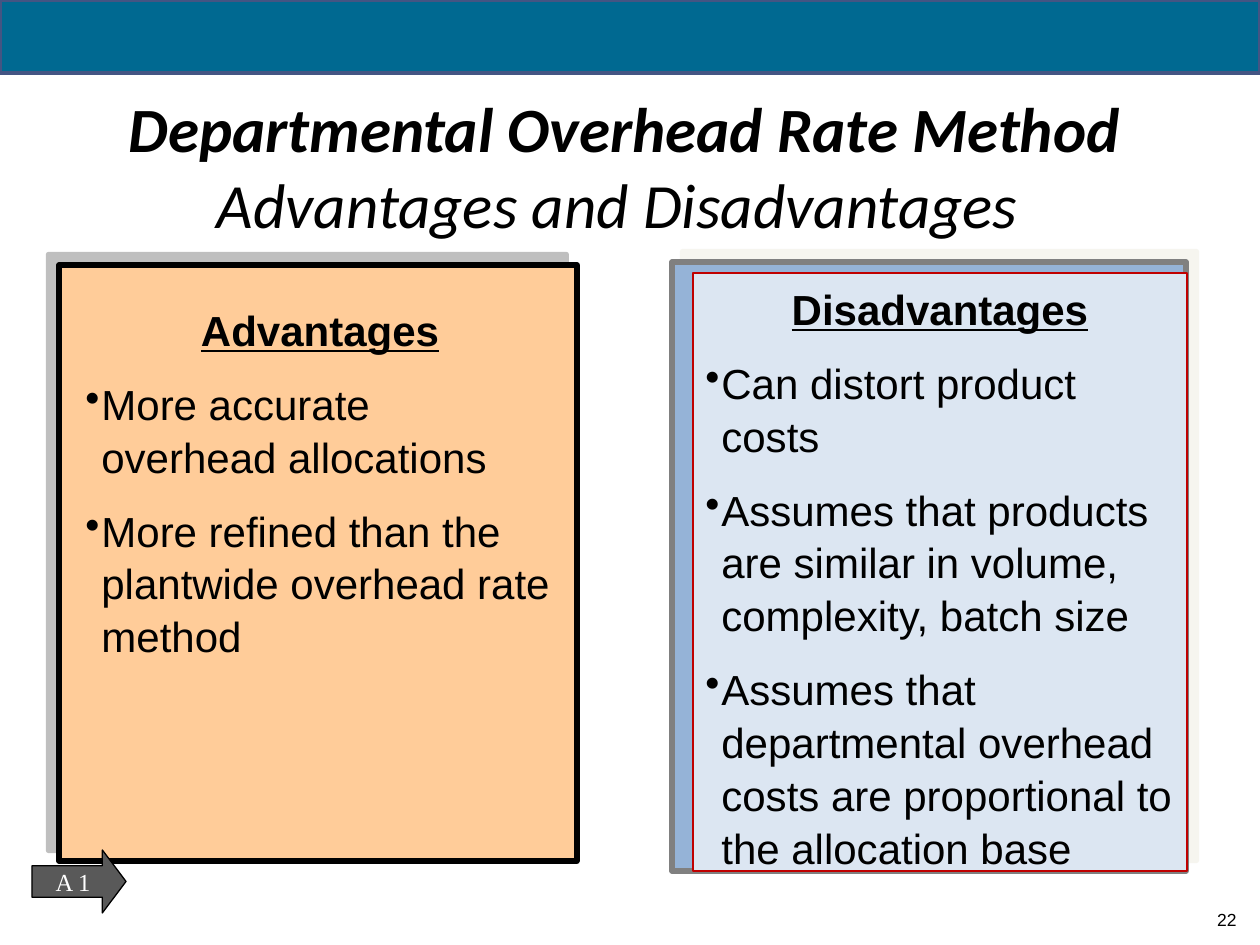
import lxml.etree
import pptx
import pptx.dml.color
import pptx.enum.shapes
import pptx.enum.text
import pptx.oxml.ns
import pptx.util

SHAPE = pptx.enum.shapes.MSO_SHAPE
ALIGN = pptx.enum.text.PP_ALIGN
ANCHOR = pptx.enum.text.MSO_ANCHOR
PX_PER_INCH = 126

TITLE = [
    ("Departmental Overhead Rate Method", True),
    ("Advantages and Disadvantages ", False),
]
PANELS = [
    {"box": (672, 262, 514, 609), "fill": "95B3D7", "line": "808080",
     "shadow": ("EEECE1", 315)},
    {"box": (59, 265, 518, 596), "fill": "FFCC99", "line": "000000",
     "shadow": ("808080", 225)},
]
LISTS = [
    {"box": (73, 294, 494, 365), "fill": None, "line": None,
     "heading": "Advantages",
     "points": [
         "More accurate overhead allocations",
         "More refined than the plantwide overhead rate method",
     ]},
    {"box": (693, 273, 494, 598), "fill": "DCE6F2", "line": "C00000",
     "heading": "Disadvantages",
     "points": [
         "Can distort product costs",
         "Assumes that products are similar in volume, complexity, batch size",
         "Assumes that departmental overhead costs are proportional "
         "to the allocation base",
     ]},
]


def px(n):
    return round(n * pptx.util.Inches(1) / PX_PER_INCH)


def rgb(value):
    return pptx.dml.color.RGBColor.from_string(value)


def set_font(font, name, size, color="000000"):
    font.name = name
    font.size = pptx.util.Pt(size)
    font.color.rgb = rgb(color)


def add_box(s, kind, box, fill, line=None, width=0.75):
    sp = s.shapes.add_shape(kind, *map(px, box))
    sp.shadow.inherit = False
    if fill:
        sp.fill.solid()
        sp.fill.fore_color.rgb = rgb(fill)
    else:
        sp.fill.background()
    if line:
        sp.line.color.rgb = rgb(line)
        sp.line.width = pptx.util.Pt(width)
    else:
        sp.line.fill.background()
    return sp


def add_shadow(sp, color, degrees):
    qn = pptx.oxml.ns.qn
    effects = sp.element.spPr.find(qn("a:effectLst"))
    shadow = lxml.etree.SubElement(
        effects, qn("a:outerShdw"), dist=str(pptx.util.Pt(8.5)),
        dir=str(degrees * 60000), algn="ctr", rotWithShape="0")
    clr = lxml.etree.SubElement(shadow, qn("a:srgbClr"), val=color)
    lxml.etree.SubElement(clr, qn("a:alpha"), val="50000")


def add_bullet(p):
    qn = pptx.oxml.ns.qn
    bullet = lxml.etree.Element(qn("a:buChar"), char="•")
    pPr = p._p.get_or_add_pPr()
    pPr.set("marL", str(px(16)))
    pPr.set("indent", str(-px(16)))
    pPr.find(qn("a:defRPr")).addprevious(bullet)


def add_list(s, item):
    sp = add_box(s, SHAPE.RECTANGLE, item["box"], item["fill"], item["line"])
    tf = sp.text_frame
    tf.word_wrap = True
    tf.vertical_anchor = ANCHOR.TOP
    tf.margin_top = px(8)
    for i, text in enumerate([item["heading"]] + item["points"]):
        p = tf.paragraphs[0] if i == 0 else tf.add_paragraph()
        p.text = text
        p.line_spacing = 1.05
        set_font(p.font, "Arial", 24)
        if i == 0:
            p.alignment = ALIGN.CENTER
            p.font.bold = True
            p.font.underline = True
        else:
            p.alignment = ALIGN.LEFT
            p.space_before = pptx.util.Pt(12)
            add_bullet(p)


def add_title(s):
    title = s.shapes.title
    title.left, title.top, title.width, title.height = map(px, (84, 88, 1081, 155))
    tf = title.text_frame
    tf.word_wrap = True
    tf.auto_size = pptx.enum.text.MSO_AUTO_SIZE.NONE
    tf.vertical_anchor = ANCHOR.MIDDLE
    p = tf.paragraphs[0]
    p.alignment = ALIGN.CENTER
    set_font(p.font, "Calibri", 36)
    p.font.italic = True
    for i, (text, bold) in enumerate(TITLE):
        if i:
            p.add_line_break()
        r = p.add_run()
        r.text = text
        r.font.bold = bold


def add_page_number(s):
    tf = s.shapes.add_textbox(*map(px, (1176, 903, 73, 32))).text_frame
    tf.word_wrap = True
    p = tf.paragraphs[0]
    p.text = "22"
    p.alignment = ALIGN.RIGHT
    set_font(p.font, "Arial", 10)


def add_arrow(s):
    sp = add_box(s, SHAPE.RIGHT_ARROW, (32, 850, 94, 63), "595959", "000000")
    sp.adjustments[0] = 0.5
    sp.adjustments[1] = 0.375
    tf = sp.text_frame
    tf.word_wrap = False
    tf.vertical_anchor = ANCHOR.MIDDLE
    p = tf.paragraphs[0]
    p.text = "A 1"
    p.alignment = ALIGN.CENTER
    set_font(p.font, "Times New Roman", 14, "FFFFFF")


def main():
    prs = pptx.Presentation()
    prs.slide_width, prs.slide_height = px(1260), px(945)
    s = prs.slides.add_slide(prs.slide_layouts[5])
    add_box(s, SHAPE.RECTANGLE, (0, 0, 1260, 73), "006991", "445583", 2.25)
    add_title(s)
    for panel in PANELS:
        sp = add_box(s, SHAPE.RECTANGLE, panel["box"], panel["fill"], panel["line"], 3)
        add_shadow(sp, *panel["shadow"])
    for item in LISTS:
        add_list(s, item)
    add_page_number(s)
    add_arrow(s)
    prs.save("out.pptx")


if __name__ == "__main__":
    main()
